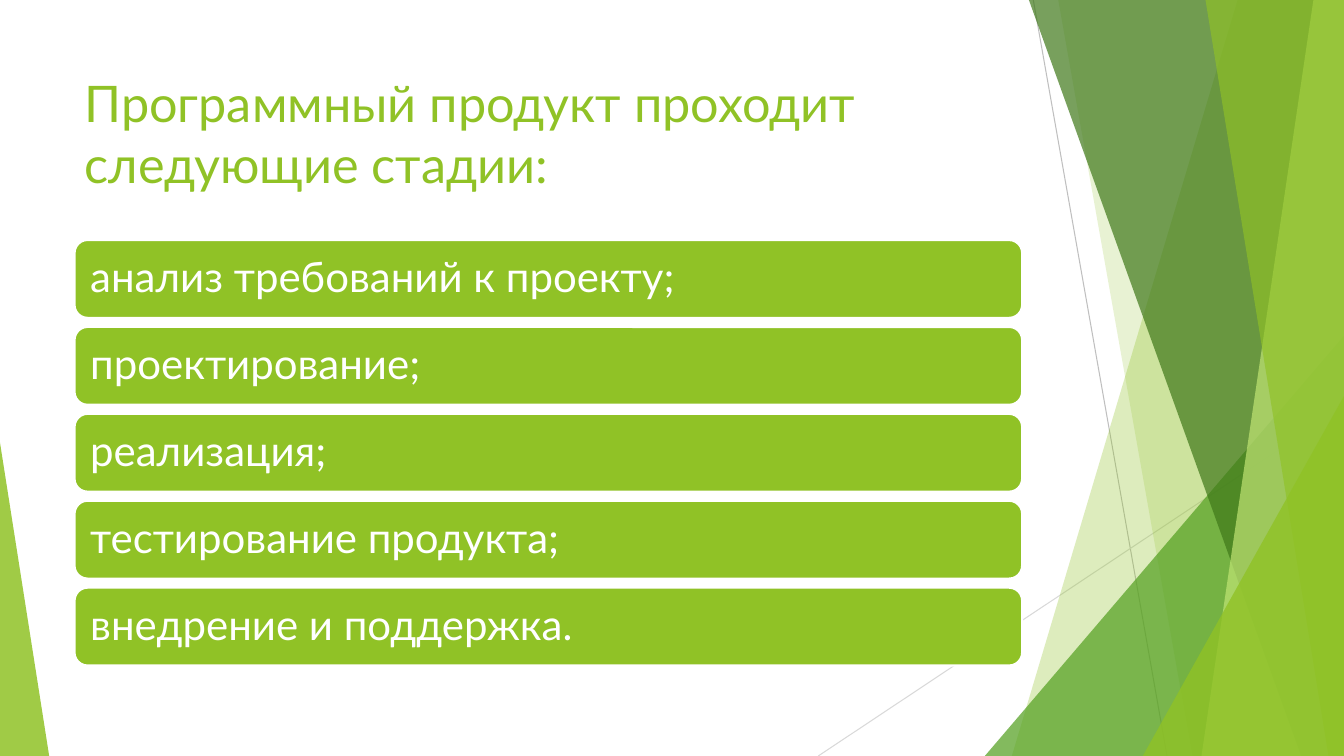
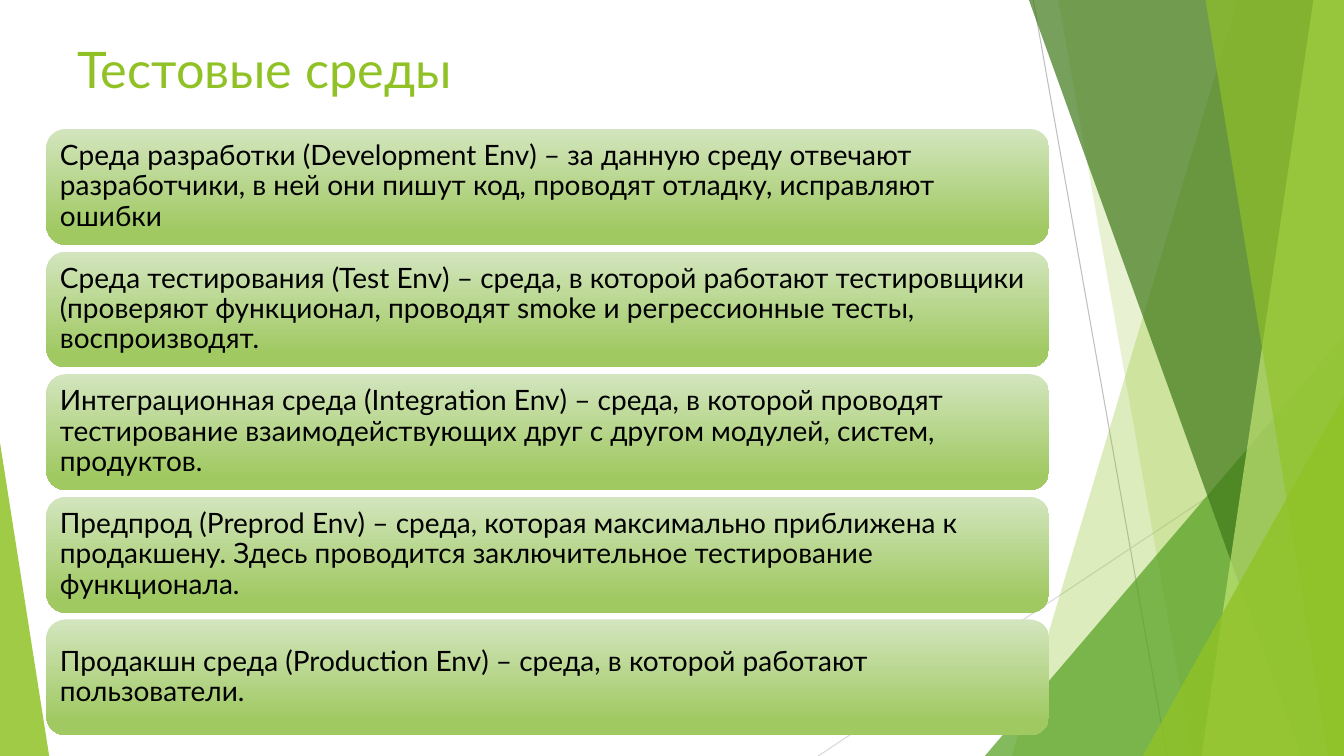
from lxml import etree
from pptx import Presentation
from pptx.dml.color import RGBColor
from pptx.enum.shapes import MSO_CONNECTOR, MSO_SHAPE
from pptx.enum.text import MSO_ANCHOR, PP_ALIGN
from pptx.oxml.ns import qn
from pptx.util import Cm, Pt

STRAIGHT = MSO_CONNECTOR.STRAIGHT
ROUNDED = MSO_SHAPE.ROUNDED_RECTANGLE
TRIANGLE = MSO_SHAPE.ISOSCELES_TRIANGLE
MIDDLE = MSO_ANCHOR.MIDDLE
LEFT = PP_ALIGN.LEFT

FONT = "Lato"
GREEN, LEAF, FOREST, LIME = "90C226", "54A021", "3F7819", "C0E474"
WHITE, BLACK = "FFFFFF", "000000"
SLIDE_W, SLIDE_H = 33.87, 19.05  # all lengths are in centimetres
TITLE_W, TITLE_H = 23.88, 3.66

SLIDES = [
    {
        "title": "Программный продукт проходит следующие стадии:",
        "title_at": (1.88, 1.7),
        "items": [
            "анализ требований к проекту;",
            "проектирование;",
            "реализация;",
            "тестирование продукта;",
            "внедрение и поддержка.",
        ],
        "bars": {"left": 1.88, "top": 6.05, "width": 23.88, "height": 1.96, "gap": 0.23},
        "fill": [GREEN],
        "outline": WHITE,
        "text": {"size": 30, "colour": WHITE, "inset": 0.3},
    },
    {
        "title": "Тестовые среды",
        "title_at": (1.7, 0.84),
        "items": [
            "Среда разработки (Development Env) – за данную среду отвечают разработчики, "
            "в ней они пишут код, проводят отладку, исправляют ошибки",
            "Среда тестирования (Test Env) – среда, в которой работают тестировщики "
            "(проверяют функционал, проводят smoke и регрессионные тесты, воспроизводят.",
            "Интеграционная среда (Integration Env) – среда, в которой проводят "
            "тестирование взаимодействующих друг с другом модулей, систем, продуктов.",
            "Предпрод (Preprod Env) – среда, которая максимально приближена к продакшену. "
            "Здесь проводится заключительное тестирование функционала.",
            "Продакшн среда (Production Env) – среда, в которой работают пользователи.",
        ],
        "bars": {"left": 1.17, "top": 3.25, "width": 25.27, "height": 2.92, "gap": 0.17},
        "fill": ["D3E5BE", "A0C962"],
        "outline": None,
        "text": {"size": 20, "colour": BLACK, "inset": 0.2},
    },
]

# start x, start y, end x, end y, colour
RAYS = [
    (26.04, 0, 29.41, SLIDE_H, "BFBFBF"),
    (SLIDE_W, 10.24, 20.62, SLIDE_H, "D9D9D9"),
]
# band: x at the top, x at the bottom; corner: left, top, width, apex (0 left, 1 right)
FACETS = [
    ("band", (31.19, 25.5), GREEN, 30),
    ("band", (26.67, 30.05), GREEN, 20),
    ("corner", (24.82, 8.46, 9.05, 1), LEAF, 72),
    ("band", (25.93, 32.79), FOREST, 70),
    ("band", (33.1, 30.28), LIME, 70),
    ("band", (30.38, 33.48), GREEN, 65),
    ("corner", (28.8, 9.98, 5.07, 1), GREEN, 80),
    ("corner", (0, 11.15, 1.24, 0), GREEN, 85),
]


def rgb(colour):
    return RGBColor.from_string(colour)


def add_band(shapes, top_x, bottom_x):
    """Add an area from a slanted left edge to the right edge of the slide."""
    outline = shapes.build_freeform(Cm(top_x), 0)
    outline.add_line_segments([
        (Cm(SLIDE_W), 0),
        (Cm(SLIDE_W), Cm(SLIDE_H)),
        (Cm(bottom_x), Cm(SLIDE_H)),
    ])
    return outline.convert_to_shape()


def add_corner(shapes, left, top, width, apex):
    """Add a right triangle that stands on the bottom edge of the slide."""
    corner = shapes.add_shape(TRIANGLE, Cm(left), Cm(top), Cm(width), Cm(SLIDE_H - top))
    corner.adjustments[0] = apex
    return corner


def add_backdrop(shapes):
    for x1, y1, x2, y2, colour in RAYS:
        ray = shapes.add_connector(STRAIGHT, Cm(x1), Cm(y1), Cm(x2), Cm(y2))
        ray.line.color.rgb = rgb(colour)
        ray.line.width = Pt(0.75)
        etree.SubElement(ray.element.spPr, qn("a:effectLst"))

    makers = {"band": add_band, "corner": add_corner}
    for kind, geometry, colour, opacity in FACETS:
        facet = makers[kind](shapes, *geometry)
        facet.shadow.inherit = False
        facet.fill.solid()
        facet.fill.fore_color.rgb = rgb(colour)
        facet.line.fill.background()
        tint = facet.element.spPr.find(".//" + qn("a:srgbClr"))
        etree.SubElement(tint, qn("a:alpha"), val=str(opacity * 1000))


def write(frame, text, size, colour):
    frame.word_wrap = True
    paragraph = frame.paragraphs[0]
    paragraph.text = text
    paragraph.alignment = LEFT
    paragraph.font.name = FONT
    paragraph.font.size = Pt(size)
    paragraph.font.color.rgb = rgb(colour)
    return paragraph


def add_title(shapes, title, left, top):
    heading = shapes.add_textbox(Cm(left), Cm(top), Cm(TITLE_W), Cm(TITLE_H))
    write(heading.text_frame, title, 36, GREEN)


def paint(bar, colours, outline):
    """Fill with one colour, or shade from the first (top) to the second."""
    bar.shadow.inherit = False
    if len(colours) == 1:
        bar.fill.solid()
        bar.fill.fore_color.rgb = rgb(colours[0])
    else:
        bar.fill.gradient()
        bar.fill.gradient_angle = 270
        for stop, colour, position in zip(bar.fill.gradient_stops, colours, (0, 0.88)):
            stop.color.rgb = rgb(colour)
            stop.position = position
    if outline:
        bar.line.color.rgb = rgb(outline)
        bar.line.width = Pt(1.5)
    else:
        bar.line.fill.background()


def add_bars(shapes, content):
    grid, style = content["bars"], content["text"]
    for row, item in enumerate(content["items"]):
        top = grid["top"] + row * (grid["height"] + grid["gap"])
        bar = shapes.add_shape(
            ROUNDED, Cm(grid["left"]), Cm(top), Cm(grid["width"]), Cm(grid["height"]))
        paint(bar, content["fill"], content["outline"])
        frame = bar.text_frame
        frame.vertical_anchor = MIDDLE
        frame.margin_left = frame.margin_right = Cm(style["inset"])
        frame.margin_top = frame.margin_bottom = Cm(style["inset"])
        write(frame, item, style["size"], style["colour"]).line_spacing = 0.9


def main():
    deck = Presentation()
    deck.slide_width, deck.slide_height = Cm(SLIDE_W), Cm(SLIDE_H)
    blank = deck.slide_layouts[6]
    for content in SLIDES:
        shapes = deck.slides.add_slide(blank).shapes
        add_backdrop(shapes)
        add_title(shapes, content["title"], *content["title_at"])
        add_bars(shapes, content)
    deck.save("out.pptx")


if __name__ == "__main__":
    main()
